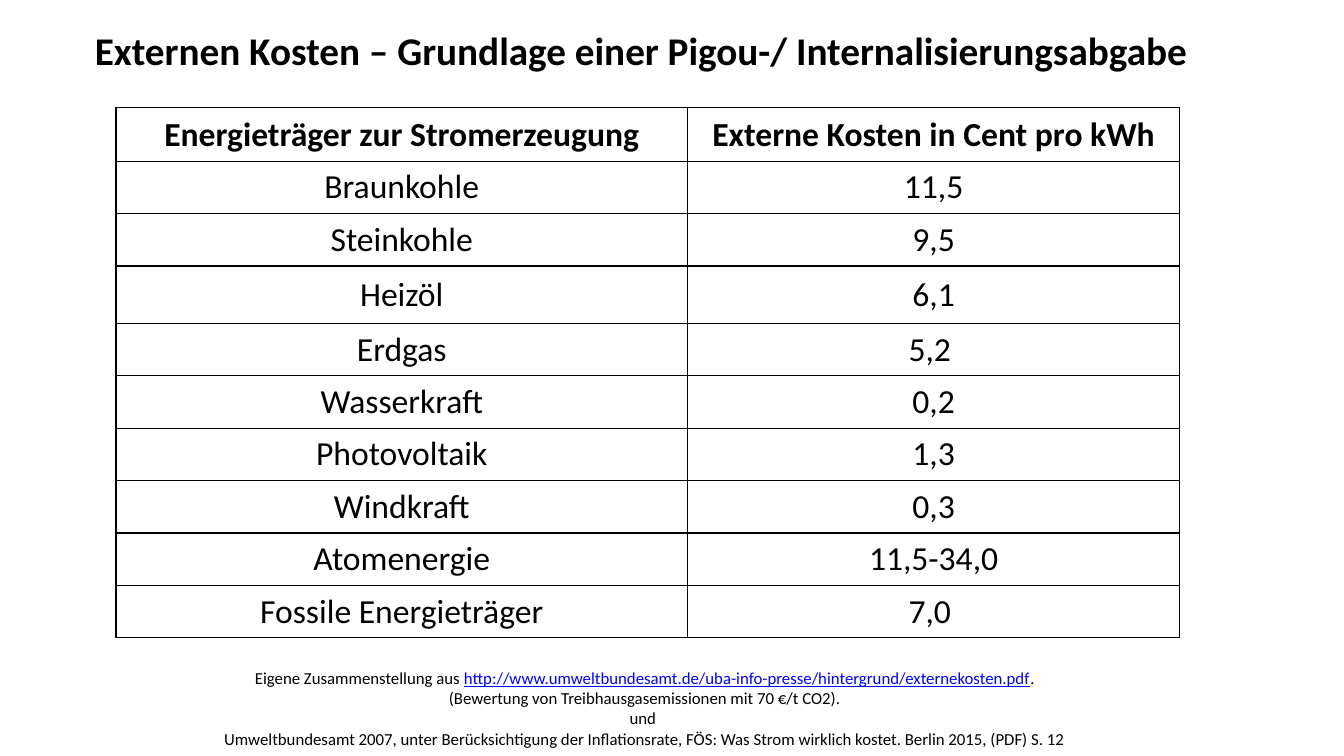
from lxml import etree
from pptx import Presentation
from pptx.dml.color import RGBColor
from pptx.enum.text import MSO_ANCHOR, PP_ALIGN
from pptx.oxml.ns import qn
from pptx.util import Inches, Pt

BLACK = RGBColor(0x00, 0x00, 0x00)
BLUE = RGBColor(0x00, 0x00, 0xFF)
LEFT, CENTER = PP_ALIGN.LEFT, PP_ALIGN.CENTER
TOP, MIDDLE = MSO_ANCHOR.TOP, MSO_ANCHOR.MIDDLE
FONT = "Calibri"

# Content
TITLE = "Externen Kosten – Grundlage einer Pigou-/ Internalisierungsabgabe"
COSTS = [
    ("Energieträger zur Stromerzeugung", "Externe Kosten in Cent pro kWh"),
    ("Braunkohle", "11,5"),
    ("Steinkohle", "9,5"),
    ("Heizöl", "6,1"),
    ("Erdgas", "5,2 "),
    ("Wasserkraft", "0,2"),
    ("Photovoltaik", "1,3"),
    ("Windkraft", "0,3"),
    ("Atomenergie", "11,5-34,0"),
    ("Fossile Energieträger", "7,0 "),
]
URL = "http://www.umweltbundesamt.de/uba-info-presse/hintergrund/externekosten.pdf"
SOURCES = [
    ["Eigene Zusammenstellung aus ", URL, "."],
    ["(Bewertung von Treibhausgasemissionen mit 70 €/t CO2)."],
    ["und "],
    ["Umweltbundesamt 2007, unter Berücksichtigung der Inflationsrate, "
     "FÖS: Was Strom wirklich kostet. Berlin 2015, (PDF) S. 12"],
]

# Table measures in inches
WIDTHS = [5.67, 4.88]
ROW = 0.52
TALL = {0: 0.53, 3: 0.57}
HEIGHTS = [TALL.get(i, ROW) for i in range(len(COSTS))]


def write(frame, lines, size=24, bold=False, align=CENTER, anchor=MIDDLE):
    """Fill a text frame; each line is a list of runs."""
    frame.word_wrap = True
    frame.vertical_anchor = anchor
    for i, line in enumerate(lines):
        para = frame.paragraphs[0] if i == 0 else frame.add_paragraph()
        para.alignment = align
        for text in line:
            run = para.add_run()
            run.text = text
            font = run.font
            font.name, font.size, font.bold = FONT, Pt(size), bold
            font.color.rgb = BLUE if text == URL else BLACK
            font.underline = text == URL


def border(cell):
    """Draw a thin black line on all four sides of a cell."""
    props = cell._tc.get_or_add_tcPr()
    for i, side in enumerate(("a:lnL", "a:lnR", "a:lnT", "a:lnB")):
        line = etree.Element(qn(side), w=str(Pt(1)))
        fill = etree.SubElement(line, qn("a:solidFill"))
        etree.SubElement(fill, qn("a:srgbClr"), val=str(BLACK))
        props.insert(i, line)


deck = Presentation()
deck.slide_width, deck.slide_height = Inches(13.33), Inches(7.5)
slide = deck.slides.add_slide(deck.slide_layouts[5])

# Title
title = slide.shapes.title
title.left, title.top = Inches(0.84), Inches(0.21)
title.width, title.height = Inches(11.1), Inches(0.57)
write(title.text_frame, [[TITLE]], size=28, bold=True, align=LEFT, anchor=TOP)

# Cost table
table = slide.shapes.add_table(
    len(COSTS), len(WIDTHS), Inches(1.15), Inches(1.07),
    Inches(sum(WIDTHS)), Inches(sum(HEIGHTS))).table
table.first_row = table.horz_banding = False
for col, width in zip(table.columns, WIDTHS):
    col.width = Inches(width)
for r, (entry, height) in enumerate(zip(COSTS, HEIGHTS)):
    table.rows[r].height = Inches(height)
    for c, text in enumerate(entry):
        cell = table.cell(r, c)
        cell.margin_left = cell.margin_right = Inches(0.05)
        cell.margin_top = cell.margin_bottom = 0
        cell.vertical_anchor = MIDDLE
        cell.fill.background()
        border(cell)
        write(cell.text_frame, [[text]], bold=r == 0)

# Sources
note = slide.shapes.add_textbox(
    Inches(0.37), Inches(6.57), Inches(12.05), Inches(0.91))
write(note.text_frame, SOURCES, size=12)

deck.save("out.pptx")
